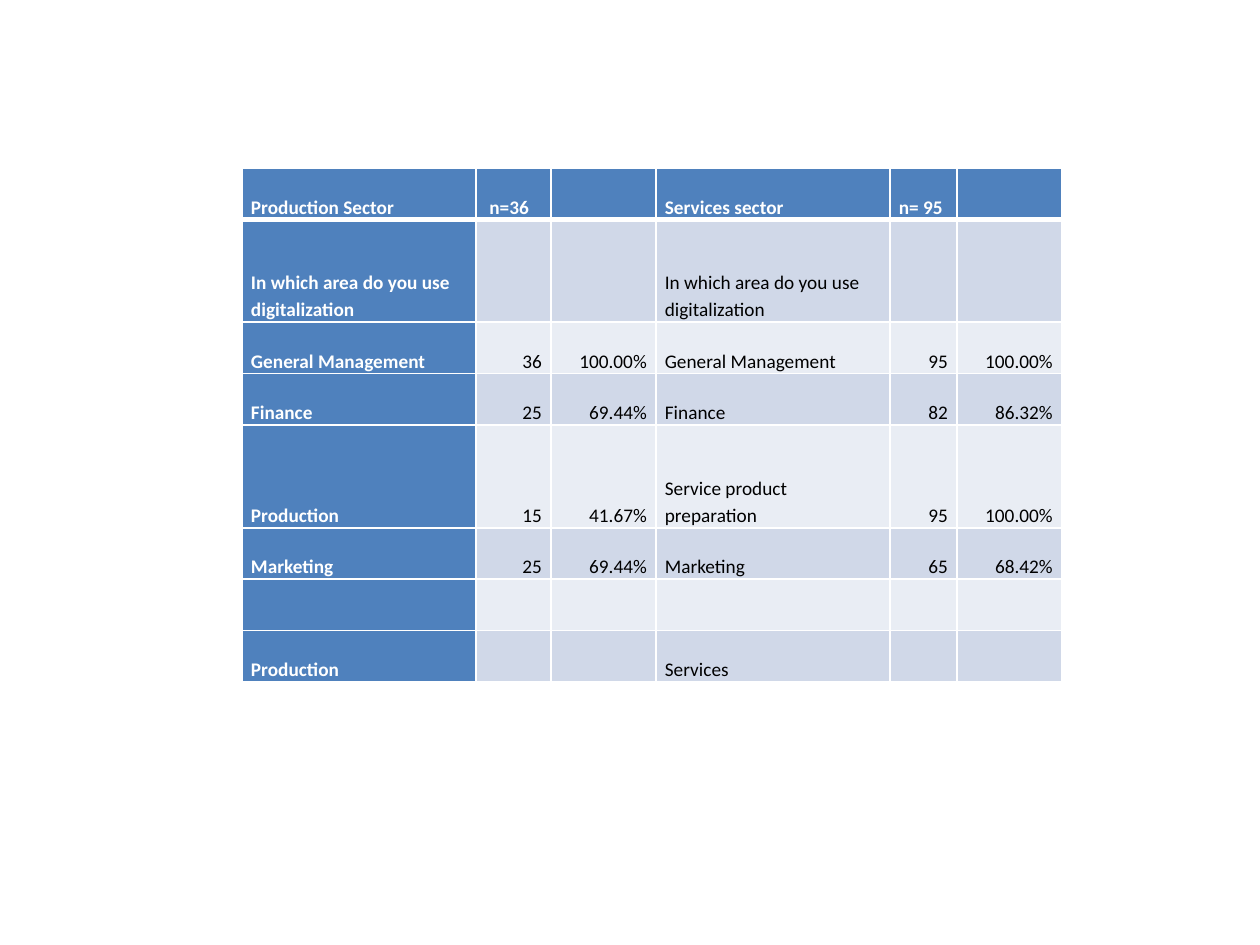
"""Build a slide with a table on the use of digitalization by sector."""
from lxml import etree
from pptx import Presentation
from pptx.dml.color import RGBColor
from pptx.enum.text import MSO_ANCHOR, PP_ALIGN
from pptx.oxml.ns import qn
from pptx.util import Pt

BOTTOM = MSO_ANCHOR.BOTTOM
LEFT, RIGHT = PP_ALIGN.LEFT, PP_ALIGN.RIGHT
PX = 914400 // 126
BLUE, DARK, PALE = "4F81BD", "D0D8E8", "E9EDF4"
WHITE, BLACK = "FFFFFF", "000000"

ROWS = [
    ("Production Sector", " n=36", "", "Services sector", "n= 95", ""),
    ("In which area do you use digitalization", "", "",
     "In which area do you use digitalization", "", ""),
    ("General Management", "36", "100.00%", "General Management", "95", "100.00%"),
    ("Finance", "25", "69.44%", "Finance", "82", "86.32%"),
    ("Production", "15", "41.67%", "Service product preparation", "95", "100.00%"),
    ("Marketing", "25", "69.44%", "Marketing", "65", "68.42%"),
    ("", "", "", "", "", ""),
    ("Production", "", "", "Services", "", ""),
]
WIDE = (234, 75, 105, 234, 67, 105)
SHARE = (1, 2, 1, 1, 2, 1, 1, 1)
X, Y, HIGH = 242, 168, 514
CELL = {"vertical_anchor": BOTTOM, "margin_left": 9 * PX, "margin_right": 9 * PX,
        "margin_top": 0, "margin_bottom": 0}


def color(code):
    """Turn a hex string into a colour."""
    return RGBColor.from_string(code)


def border(cell, row):
    """Draw the white lines round a cell, with a thick one below the header."""
    props = cell._tc.get_or_add_tcPr()
    size = {"L": 1, "R": 1, "T": 3 if row == 1 else 1, "B": 3 if row == 0 else 1}
    for spot, (side, width) in enumerate(size.items()):
        line = etree.Element(qn(f"a:ln{side}"), w=str(Pt(width)))
        fill = etree.SubElement(line, qn("a:solidFill"))
        etree.SubElement(fill, qn("a:srgbClr"), val=WHITE)
        props.insert(spot, line)


def dress(cell, text, row, col):
    """Fill one cell and set its text."""
    head = row == 0 or col == 0
    for name, value in CELL.items():
        setattr(cell, name, value)
    cell.fill.solid()
    cell.fill.fore_color.rgb = color(BLUE if head else DARK if row % 2 else PALE)
    border(cell, row)
    if not text:
        return
    para = cell.text_frame.paragraphs[0]
    para.line_spacing = 1.15
    para.alignment = RIGHT if row and col % 3 else LEFT
    run = para.add_run()
    run.text = text
    for name, value in {"name": "Calibri", "size": Pt(11), "bold": head}.items():
        setattr(run.font, name, value)
    run.font.color.rgb = color(WHITE if head else BLACK)


def main():
    """Make the slide and save it."""
    deck = Presentation()
    deck.slide_width, deck.slide_height = 1260 * PX, 945 * PX
    slide = deck.slides.add_slide(deck.slide_layouts[6])
    table = slide.shapes.add_table(len(ROWS), len(WIDE), X * PX, Y * PX,
                                   sum(WIDE) * PX, HIGH * PX).table
    for col, width in zip(table.columns, WIDE):
        col.width = width * PX
    for row, share in zip(table.rows, SHARE):
        row.height = HIGH * PX * share // sum(SHARE)
    for row, texts in enumerate(ROWS):
        for col, text in enumerate(texts):
            dress(table.cell(row, col), text, row, col)
    deck.save("out.pptx")


if __name__ == "__main__":
    main()
